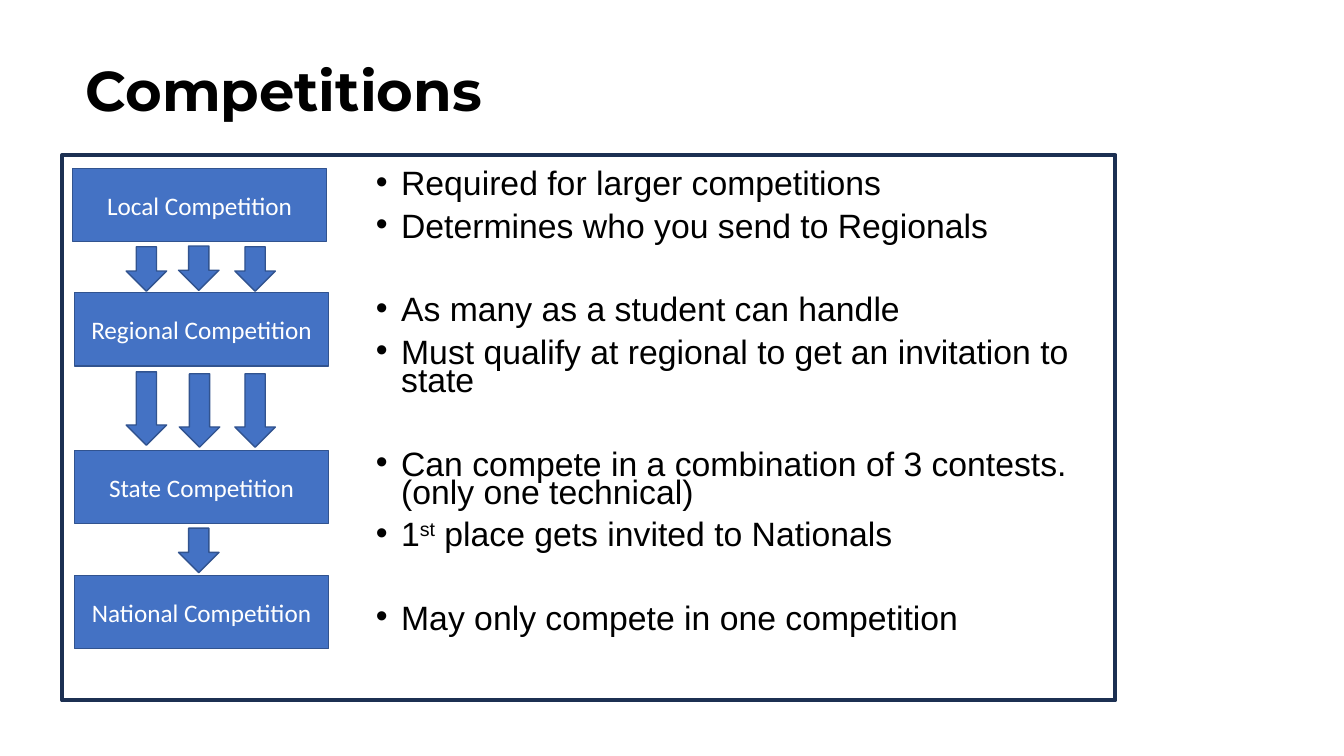
"""Build the Competitions slide: a four-stage flow beside its rules."""
from lxml.etree import SubElement
from pptx import Presentation
from pptx.dml.color import RGBColor
from pptx.enum.shapes import MSO_SHAPE
from pptx.enum.text import MSO_ANCHOR, MSO_AUTO_SIZE, PP_ALIGN
from pptx.oxml.ns import qn
from pptx.util import Cm, Pt


def add_run(p, text, size=18, font="Calibri", color="FFFFFF", bold=False, base=0):
    r = p.add_run()
    r.text = text
    r.font.size = Pt(size)
    r.font.name = font
    r.font.bold = bold
    r.font.color.rgb = RGBColor.from_string(color)
    if base:
        r.font._element.set("baseline", str(base * 1000))


def add_box(s, kind, x, y, w, h, fill="4472C4", line="31538F", width=1):
    sp = s.shapes.add_shape(kind, Cm(x), Cm(y), Cm(w), Cm(h))
    sp.shadow.inherit = False
    sp.fill.solid()
    sp.fill.fore_color.rgb = RGBColor.from_string(fill)
    sp.line.color.rgb = RGBColor.from_string(line)
    sp.line.width = Pt(width)
    return sp


prs = Presentation()
prs.slide_width, prs.slide_height = Cm(33.87), Cm(19.05)
s = prs.slides.add_slide(prs.slide_layouts[1])
title, body = s.shapes.title, s.placeholders[1]

frame = add_box(s, MSO_SHAPE.RECTANGLE, 1.57, 3.91, 26.54, 13.74, "FFFFFF", "1C3052", 3)
title._element.addprevious(frame._element)

title.left, title.top, title.width, title.height = Cm(1.9), Cm(1.02), Cm(27.69), Cm(2.67)
body.left, body.top, body.width, body.height = Cm(9.22), Cm(4.24), Cm(18.82), Cm(12.45)
for sp, anchor in ((title, MSO_ANCHOR.MIDDLE), (body, MSO_ANCHOR.TOP)):
    sp.text_frame.auto_size = MSO_AUTO_SIZE.NONE
    sp.text_frame.word_wrap = True
    sp.text_frame.vertical_anchor = anchor

p = title.text_frame.paragraphs[0]
p.alignment = PP_ALIGN.LEFT
p.line_spacing = 0.9
add_run(p, "Competitions", size=40, font="Montserrat", color="000000", bold=True)

groups = [
    [["Required for larger competitions"], ["Determines who you send to Regionals"]],
    [["As many as a student can handle"],
     ["Must qualify at regional to get an invitation to state"]],
    [["Can compete in a combination of 3 contests. (only one technical)"],
     ["1", "st", " place gets invited to Nationals"]],
    [["May only compete in one competition"]],
]
tf = body.text_frame
for i, group in enumerate(groups):
    for j, parts in enumerate(group):
        first = i == j == 0
        p = tf.paragraphs[0] if first else tf.add_paragraph()
        p.line_spacing = 0.7
        p.space_before = Pt(0 if first else 10 if j else 39.5)
        p.space_after = Pt(0)
        pPr = p._p.get_or_add_pPr()
        pPr.set("marL", str(Cm(0.635)))
        pPr.set("indent", str(-Cm(0.635)))
        SubElement(SubElement(pPr, qn("a:buClr")), qn("a:srgbClr"), val="000000")
        SubElement(pPr, qn("a:buFont"), typeface="Arial")
        SubElement(pPr, qn("a:buChar"), char="•")
        for text in parts:
            add_run(p, text, size=24.1, font="Arial", color="000000",
                    base=30 if text == "st" else 0)

stages = [("Local", 1.83, 4.24), ("Regional", 1.88, 7.37),
          ("State", 1.88, 11.35), ("National", 1.88, 14.5)]
for name, x, y in stages:
    sp = add_box(s, MSO_SHAPE.RECTANGLE, x, y, 6.4, 1.85)
    sp.text_frame.word_wrap = True
    sp.text_frame.vertical_anchor = MSO_ANCHOR.MIDDLE
    p = sp.text_frame.paragraphs[0]
    p.alignment = PP_ALIGN.CENTER
    add_run(p, f"{name} Competition")

arrows = [(3.18, 6.22, 1.12), (4.5, 6.2, 1.12), (5.92, 6.22, 1.12),
          (3.18, 9.37, 1.85), (4.52, 9.42, 1.85), (5.92, 9.42, 1.85),
          (4.5, 13.31, 1.12)]
for x, y, h in arrows:
    add_box(s, MSO_SHAPE.DOWN_ARROW, x, y, 1.02, h)

prs.save("out.pptx")
